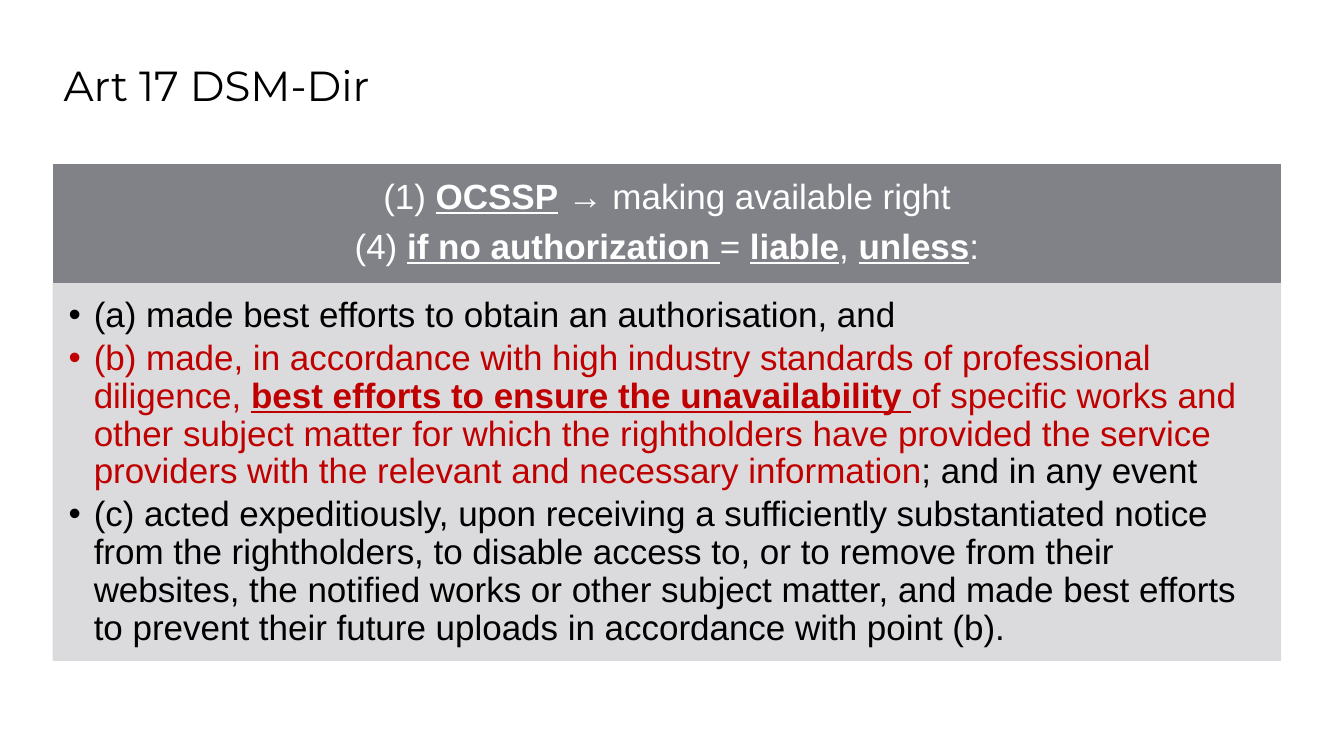
import pptx
import pptx.dml.color
import pptx.enum.shapes
import pptx.enum.text
import pptx.oxml
import pptx.oxml.ns
import pptx.util
from pptx.util import Inches

BLACK, WHITE, RED = "000000", "FFFFFF", "C00000"
GREY, PALE = "808288", "D8D8DA"
LEFT, WIDTH = 0.53, 12.17
CONDITION_SIZE = 25

# Each run is (text, colour, emphasised).
HEADING = [
    [("(1) ", WHITE, False), ("OCSSP", WHITE, True),
     (" → making available right", WHITE, False)],
    [("(4) ", WHITE, False), ("if no authorization ", WHITE, True),
     ("= ", WHITE, False), ("liable", WHITE, True), (", ", WHITE, False),
     ("unless", WHITE, True), (":", WHITE, False)],
]
CONDITIONS = [
    [("(a) made best efforts to obtain an authorisation, and", BLACK, False)],
    [("(b) made, in accordance with high industry standards of professional "
      "diligence, ", RED, False),
     ("best efforts to ensure the unavailability ", RED, True),
     ("of specific works and other subject matter for which the rightholders "
      "have provided the service providers with the relevant and necessary "
      "information", RED, False),
     ("; and in any event", BLACK, False)],
    [("(c) acted expeditiously, upon receiving a sufficiently substantiated "
      "notice from the rightholders, to disable access to, or to remove from "
      "their websites, the notified works or other subject matter, and made "
      "best efforts to prevent their future uploads in accordance with point "
      "(b).", BLACK, False)],
]


def colour(value):
    return pptx.dml.color.RGBColor.from_string(value)


def place(shape, left, top, width, height):
    shape.left, shape.top = Inches(left), Inches(top)
    shape.width, shape.height = Inches(width), Inches(height)


def paint(shape, value, opacity=100):
    """Give the shape one colour for fill and line, at an opacity in percent."""
    shape.fill.solid()
    shape.fill.fore_color.rgb = colour(value)
    shape.line.color.rgb = colour(value)
    shape.line.width = pptx.util.Pt(1)
    if opacity < 100:
        for tint in shape._element.spPr.iter(pptx.oxml.ns.qn("a:srgbClr")):
            alpha = pptx.oxml.parse_xml(
                f'<a:alpha {pptx.oxml.ns.nsdecls("a")} val="{opacity * 1000}"/>')
            tint.append(alpha)


def set_frame(shape, anchor, insets):
    frame = shape.text_frame
    frame.word_wrap = True
    frame.auto_size = pptx.enum.text.MSO_AUTO_SIZE.NONE
    frame.vertical_anchor = anchor
    (frame.margin_left, frame.margin_top,
     frame.margin_right, frame.margin_bottom) = map(Inches, insets)
    return frame


def add_run(para, text, size, value, font="Arial", strong=False):
    """Add a run; a strong one is bold and underlined."""
    span = para.add_run()
    span.text = text
    span.font.name = font
    span.font.size = pptx.util.Pt(size)
    span.font.color.rgb = colour(value)
    span.font.bold = strong
    span.font.underline = strong


def add_bullet(para, value):
    properties = para._p.get_or_add_pPr()
    properties.set("marL", str(Inches(0.25)))
    properties.set("indent", str(-Inches(0.25)))
    names = pptx.oxml.ns.nsdecls("a")
    for markup in (f'<a:buClr {names}><a:srgbClr val="{value}"/></a:buClr>',
                   f'<a:buFont {names} typeface="Arial"/>',
                   f'<a:buChar {names} char="•"/>'):
        properties.append(pptx.oxml.parse_xml(markup))


def write_paragraphs(frame, paragraphs, align, gap, bulleted=False):
    """Write lists of runs; gap is the space after, as a share of the size."""
    for index, runs in enumerate(paragraphs):
        para = frame.paragraphs[0] if index == 0 else frame.add_paragraph()
        para.alignment = align
        para.line_spacing = 0.9
        para.space_before = pptx.util.Pt(0)
        para.space_after = pptx.util.Pt(CONDITION_SIZE * gap)
        if bulleted:
            add_bullet(para, runs[0][1])
        for text, value, strong in runs:
            add_run(para, text, CONDITION_SIZE, value, strong=strong)


def fill_title(page, *box):
    title = page.shapes.title
    place(title, *box)
    frame = set_frame(title, pptx.enum.text.MSO_ANCHOR.TOP,
                      (0.1, 0.05, 0.1, 0.05))
    para = frame.paragraphs[0]
    para.alignment = pptx.enum.text.PP_ALIGN.LEFT
    para.line_spacing = 0.83
    add_run(para, "Art 17 DSM-Dir", 30, BLACK, font="Montserrat")


def add_heading(page, *box):
    bar = page.shapes.add_shape(pptx.enum.shapes.MSO_SHAPE.RECTANGLE,
                                *map(Inches, box))
    bar.shadow.inherit = False
    paint(bar, GREY)
    frame = set_frame(bar, pptx.enum.text.MSO_ANCHOR.MIDDLE,
                      (0.19, 0.11, 0.19, 0.11))
    write_paragraphs(frame, HEADING, pptx.enum.text.PP_ALIGN.CENTER, 0.35)


def fill_conditions(page, *box):
    body = page.placeholders[1]
    place(body, *box)
    paint(body, PALE, opacity=90)
    frame = set_frame(body, pptx.enum.text.MSO_ANCHOR.TOP,
                      (0.15, 0.15, 0.19, 0.22))
    write_paragraphs(frame, CONDITIONS, pptx.enum.text.PP_ALIGN.LEFT, 0.15,
                     bulleted=True)


def main():
    deck = pptx.Presentation()
    deck.slide_width, deck.slide_height = Inches(13.33), Inches(7.5)
    page = deck.slides.add_slide(deck.slide_layouts[1])
    fill_title(page, LEFT, 0.63, WIDTH, 1.08)
    add_heading(page, LEFT, 1.63, WIDTH, 1.17)
    fill_conditions(page, LEFT, 2.8, WIDTH, 3.75)
    deck.save("out.pptx")


if __name__ == "__main__":
    main()
